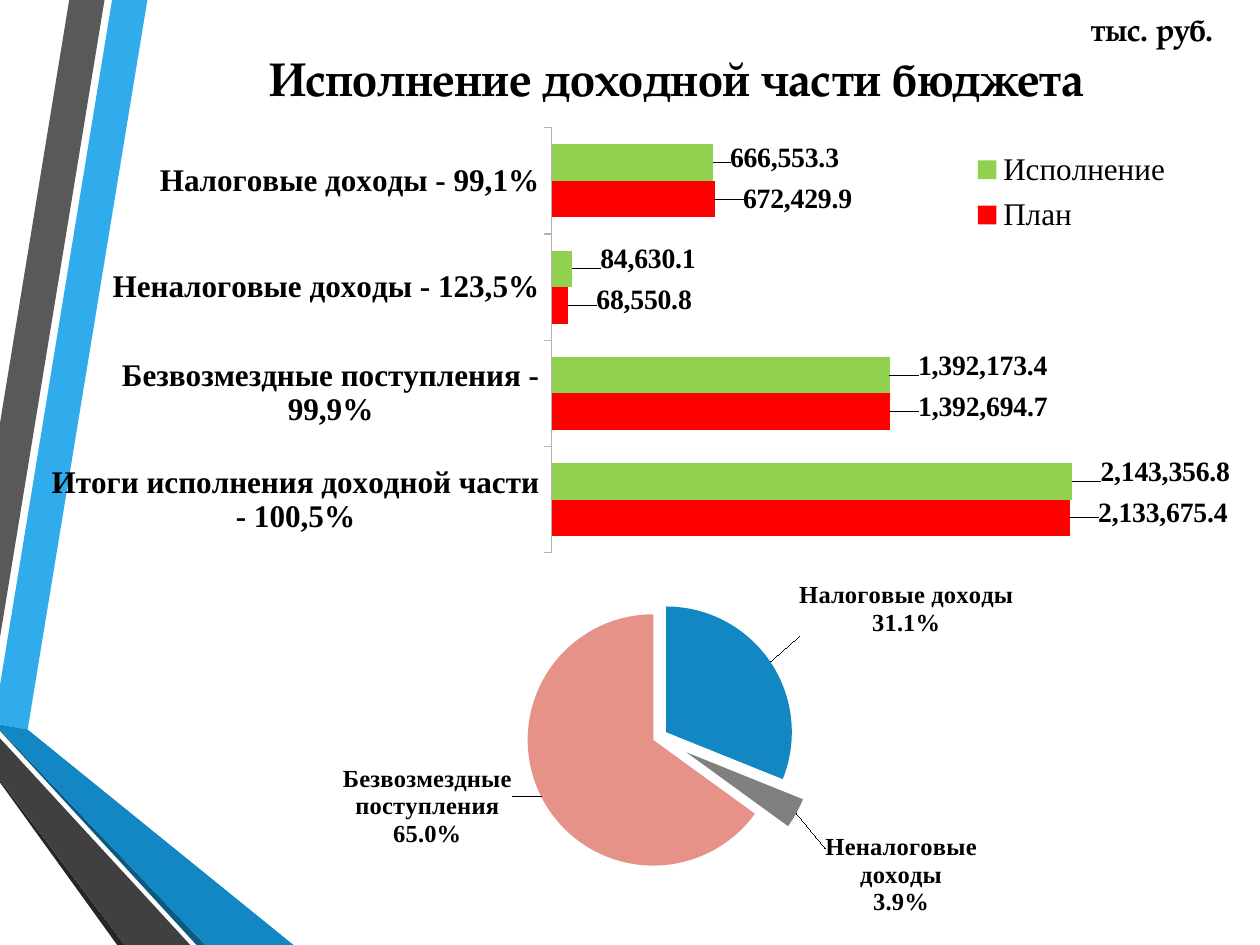
from copy import deepcopy
from dataclasses import dataclass

from lxml import etree
from pptx import Presentation
from pptx.chart.data import CategoryChartData
from pptx.dml.color import RGBColor
from pptx.enum.chart import XL_CHART_TYPE, XL_LABEL_POSITION, XL_LEGEND_POSITION, XL_TICK_MARK
from pptx.enum.text import MSO_ANCHOR, MSO_AUTO_SIZE, PP_ALIGN
from pptx.oxml.ns import qn
from pptx.util import Inches, Pt

BAR, PIE = XL_CHART_TYPE.BAR_CLUSTERED, XL_CHART_TYPE.PIE
OUTSIDE_END = XL_LABEL_POSITION.OUTSIDE_END
LEGEND_RIGHT = XL_LEGEND_POSITION.RIGHT
TICK_OUT, TICK_NONE = XL_TICK_MARK.OUTSIDE, XL_TICK_MARK.NONE
MIDDLE, CENTER = MSO_ANCHOR.MIDDLE, PP_ALIGN.CENTER
FIT_SHAPE, NO_FIT = MSO_AUTO_SIZE.SHAPE_TO_FIT_TEXT, MSO_AUTO_SIZE.NONE
WIDTH, HEIGHT = Inches(10), Inches(7.5)
TITLE_ONLY = 5


@dataclass(frozen=True)
class Theme:
    heading: str = "TeX Gyre Pagella"
    body: str = "Cabin"
    label: str = "Times New Roman"
    text: str = "000000"
    axis: str = "B3B3B3"
    plan: str = "FF0000"
    actual: str = "92D050"
    slices: tuple = ("1287C3", "808080", "E69289")
    title_size: float = 27
    base_size: float = 18
    bar_base_size: float = 16.8
    bar_label_size: float = 16
    pie_label_size: float = 14


THEME = Theme()

RIBBONS = [
    ("30ACEC", [(0, 544), (0, 575), (22, 579), (117, 0), (89, 0)]),
    ("595959", [(83, 0), (55, 0), (0, 336), (0, 506)]),
    ("262626", [(0, 619), (0, 621), (93, 750), (99, 750)]),
    ("0C5A82", [(0, 579), (0, 580), (156, 750), (163, 750)]),
    ("1287C3", [(0, 579), (163, 750), (233, 750), (22, 579), (0, 575)]),
    ("404040", [(0, 619), (99, 750), (151, 750), (0, 586)]),
]

BAR_CATEGORIES = [
    "Итоги исполнения доходной части - 100,5%",
    "Безвозмездные поступления - 99,9%",
    "Неналоговые доходы - 123,5%",
    "Налоговые доходы - 99,1%",
]
BAR_SERIES = [
    ("План", THEME.plan, [2133675.4, 1392694.7, 68550.8, 672429.9],
     [(0.02, -0.01), (0.02, -0.01), (0.02, -0.01), (0.02, 0)]),
    ("Исполнение", THEME.actual, [2143356.8, 1392173.4, 84630.1, 666553.3],
     [(0.02, -0.02), (0.02, -0.02), (0.02, -0.02), (0.01, -0.01)]),
]
PIE_CATEGORIES = ["Налоговые доходы", "Неналоговые доходы", "Безвозмездные поступления"]
PIE_VALUES = [31.1, 3.9, 65]
PIE_EXPLOSIONS = [7, 25, 5]
PIE_LABEL_SHIFTS = [(0.02, -0.06), (0.02, 0.09), (-0.02, -0.1)]


def percent_box(x, y, w, h):
    return [int(side * share / 100)
            for side, share in zip((WIDTH, HEIGHT, WIDTH, HEIGHT), (x, y, w, h))]


def style(font, name, size, bold=False):
    font.name, font.size, font.bold = name, Pt(size), bold
    font.color.rgb = RGBColor.from_string(THEME.text)


def paint(fmt, color):
    fmt.fill.solid()
    fmt.fill.fore_color.rgb = RGBColor.from_string(color)


def element(tag, **attrs):
    el = etree.Element(qn(f"c:{tag}"))
    for key, value in attrs.items():
        el.set(key, str(value))
    return el


def manual_layout(inner=False, **sizes):
    layout = element("layout")
    manual = etree.SubElement(layout, qn("c:manualLayout"))
    if inner:
        manual.append(element("layoutTarget", val="inner"))
    if "w" in sizes:
        manual.extend([element("xMode", val="edge"), element("yMode", val="edge")])
    manual.extend(element(key, val=value) for key, value in sizes.items())
    return layout


def place_plot(chart, x, y, w, h):
    area = chart._chartSpace.chart.plotArea
    for old in area.findall(qn("c:layout")):
        area.remove(old)
    area.insert(0, manual_layout(inner=True, x=x, y=y, w=w, h=h))


def place_legend(chart, x, y, w, h):
    legend = chart.legend._element
    for old in legend.findall(qn("c:layout")):
        legend.remove(old)
    legend.find(qn("c:legendPos")).addnext(manual_layout(x=x, y=y, w=w, h=h))


def format_labels(series, size, number_format):
    labels = series.data_labels
    style(labels.font, THEME.label, size, True)
    labels.number_format, labels.number_format_is_linked = number_format, False
    labels.position = OUTSIDE_END
    return labels


def shift_labels(labels, shifts):
    group = labels._element
    shared = [el for el in group if el.tag != qn("c:showLeaderLines")]
    for i, (x, y) in enumerate(shifts):
        label = element("dLbl")
        label.extend([element("idx", val=i), manual_layout(x=x, y=y)])
        label.extend(deepcopy(el) for el in shared)
        group.insert(i, label)


def add_chart(slide, kind, box, categories, series, size):
    data = CategoryChartData()
    data.categories = categories
    for name, values in series:
        data.add_series(name, values)
    chart = slide.shapes.add_chart(kind, *percent_box(*box), data).chart
    chart.has_title = False
    style(chart.font, THEME.body, size)
    return chart


def add_ribbon(slide, color, points):
    builder = slide.shapes.build_freeform(*points[0], scale=Inches(0.01))
    builder.add_line_segments(points[1:], close=True)
    sp = builder.convert_to_shape()
    sp.shadow.inherit = False
    paint(sp, color)
    sp.line.fill.background()


def format_title(slide, text):
    sp = slide.shapes.title
    sp.left, sp.top, sp.width, sp.height = percent_box(9.8, 4, 87.8, 8.53)
    tf = sp.text_frame
    tf.text, tf.vertical_anchor, tf.auto_size = text, MIDDLE, NO_FIT
    p = tf.paragraphs[0]
    p.alignment = CENTER
    style(p.font, THEME.heading, THEME.title_size, True)


def add_unit_note(slide, text):
    tf = slide.shapes.add_textbox(*percent_box(85.6, 0.4, 13.1, 5.33)).text_frame
    tf.text, tf.word_wrap, tf.auto_size = text, False, FIT_SHAPE
    style(tf.paragraphs[0].font, THEME.heading, THEME.base_size, True)


def add_income_bars(slide):
    chart = add_chart(slide, BAR, (3.9, 12.53, 93.8, 48.93), BAR_CATEGORIES,
                      [(name, values) for name, _, values, _ in BAR_SERIES],
                      THEME.bar_base_size)
    place_plot(chart, 0.43, 0.02, 0.52, 0.92)
    plot = chart.plots[0]
    plot.gap_width, plot.vary_by_categories = 91, False
    for series, (_, color, _, shifts) in zip(plot.series, BAR_SERIES):
        paint(series.format, color)
        labels = format_labels(series, THEME.bar_label_size, "#,##0.0")
        labels.show_value = True
        shift_labels(labels, shifts)
    axis = chart.category_axis
    axis.major_tick_mark, axis.minor_tick_mark = TICK_OUT, TICK_NONE
    axis.format.line.color.rgb = RGBColor.from_string(THEME.axis)
    style(axis.tick_labels.font, THEME.label, THEME.base_size, True)
    chart.value_axis.visible = False
    chart.value_axis.has_major_gridlines = False
    chart.value_axis.tick_labels.number_format = "#,##0.0"
    chart.has_legend = True
    chart.legend.position, chart.legend.include_in_layout = LEGEND_RIGHT, False
    style(chart.legend.font, THEME.label, THEME.base_size)
    place_legend(chart, 0.78, 0.05, 0.19, 0.22)


def add_structure_pie(slide):
    chart = add_chart(slide, PIE, (6.3, 59.47, 90.2, 37.47), PIE_CATEGORIES,
                      [("Series 1", PIE_VALUES)], THEME.base_size)
    chart.has_legend = False
    place_plot(chart, 0.11, 0.14, 0.8, 0.71)
    chart.plots[0].vary_by_categories = True
    series = chart.plots[0].series[0]
    for i, (color, explosion) in enumerate(zip(THEME.slices, PIE_EXPLOSIONS)):
        point = series.points[i]
        paint(point.format, color)
        point.format.line.fill.background()
        sp_pr = series._element.findall(qn("c:dPt"))[i].find(qn("c:spPr"))
        sp_pr.addprevious(element("explosion", val=explosion))
    labels = format_labels(series, THEME.pie_label_size, "0.0%")
    labels.show_value = False
    labels.show_category_name = labels.show_percentage = True
    separator = element("separator")
    separator.text = "\n"
    labels._element.find(qn("c:showBubbleSize")).addnext(separator)
    shift_labels(labels, PIE_LABEL_SHIFTS)


def main():
    prs = Presentation()
    prs.slide_width, prs.slide_height = WIDTH, HEIGHT
    slide = prs.slides.add_slide(prs.slide_layouts[TITLE_ONLY])
    for color, points in RIBBONS:
        add_ribbon(slide, color, points)
    format_title(slide, "Исполнение доходной части бюджета")
    add_income_bars(slide)
    add_structure_pie(slide)
    add_unit_note(slide, "тыс. руб.")
    prs.save("out.pptx")


if __name__ == "__main__":
    main()
